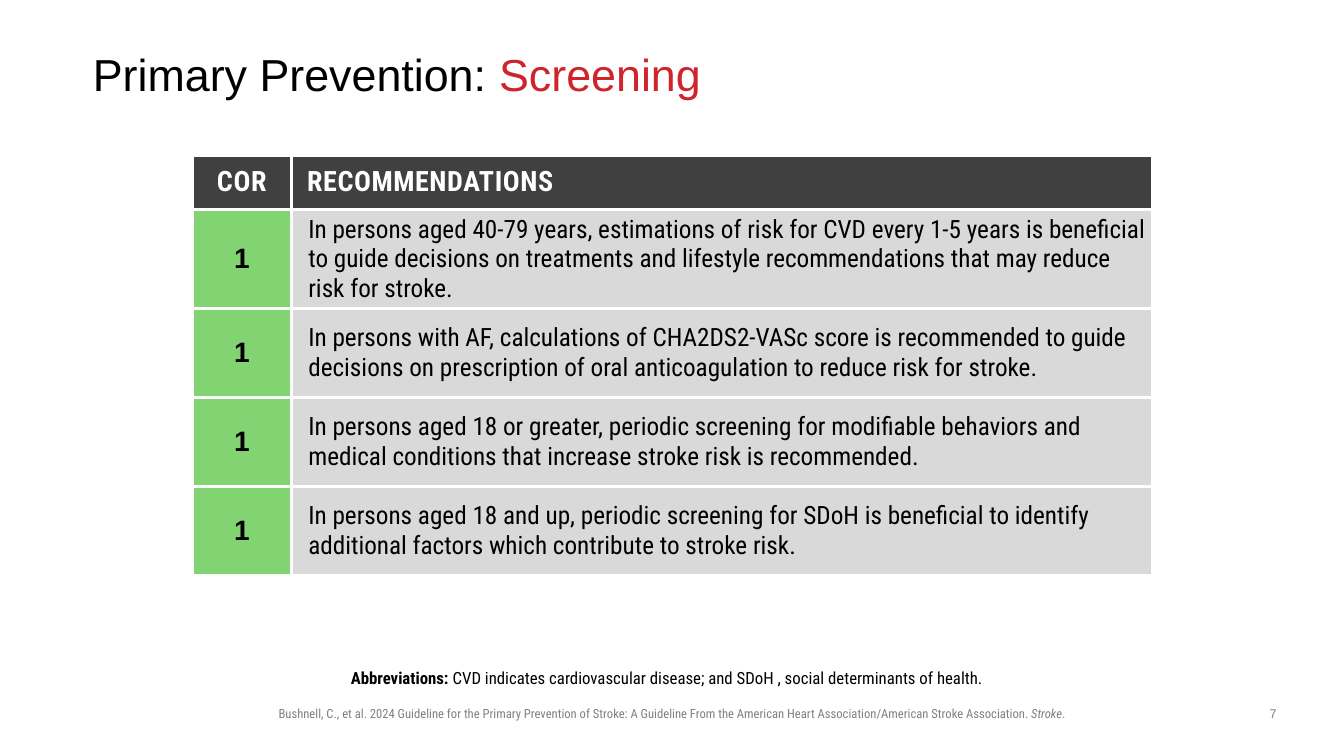
from lxml.etree import SubElement
from pptx import Presentation
from pptx.dml.color import RGBColor
from pptx.enum.text import MSO_ANCHOR, MSO_AUTO_SIZE, PP_ALIGN
from pptx.oxml.ns import qn
from pptx.util import Cm, Pt

COLORS = {"black": "000000", "red": "CF2429", "gray": "808080", "white": "FFFFFF",
          "head": "404040", "green": "82D472", "pale": "D9D9D9"}
SANS, ROBOTO = "Arial", "Roboto Condensed"

TITLE = [("Primary Prevention: ", {}), ("Screening", {"color": "red"})]
HEADS = ["COR", "RECOMMENDATIONS"]
ADVICE = [
    ("1", "In persons aged 40-79 years, estimations of risk for CVD every 1-5 years is "
          "beneficial to guide decisions on treatments and lifestyle recommendations that "
          "may reduce risk for stroke."),
    ("1", "In persons with AF, calculations of CHA2DS2-VASc score is recommended to guide "
          "decisions on prescription of oral anticoagulation to reduce risk for stroke."),
    ("1", "In persons aged 18 or greater, periodic screening for modifiable behaviors and "
          "medical conditions that increase stroke risk is recommended."),
    ("1", "In persons aged 18 and up, periodic screening for SDoH is beneficial to identify "
          "additional factors which contribute to stroke risk."),
]
ABBREV = [("Abbreviations: ", {"bold": True}),
          ("CVD indicates cardiovascular disease; and SDoH , social determinants of health.", {})]
SOURCE = [("Bushnell, C., et al. 2024 Guideline for the Primary Prevention of Stroke: A Guideline "
           "From the American Heart Association/American Stroke Association. ", {}),
          ("Stroke", {"italic": True}), (".", {})]
NUMBER = [("7", {})]

HEAD = {"size": Pt(20), "name": ROBOTO, "color": "white", "bold": True}
GRADE = {"size": Pt(20), "name": SANS, "color": "black", "bold": True}
BODY = {"size": Pt(18), "name": ROBOTO, "color": "black", "bold": False}
SMALL = {"size": Pt(9), "color": "gray"}
SIDES = ("left", "top", "right", "bottom")
INSET = (0.25, 0.13, 0.25, 0.13)
TIGHT = (0.13, 0.13, 0.13, 0.13)
COLS = (2.49, 21.69)
HEAD_ROW, BODY_ROW = 1.37, 2.24


def rgb(name):
    return RGBColor.from_string(COLORS[name])


def write(frame, parts, style, align):
    para = frame.paragraphs[0]
    para.alignment = align
    for text, extra in parts:
        run = para.add_run()
        run.text = text
        for key, value in {**style, **extra}.items():
            if key == "color":
                run.font.color.rgb = rgb(value)
            else:
                setattr(run.font, key, value)
    return para


def pad(item, sizes):
    for side, size in zip(SIDES, sizes):
        setattr(item, f"margin_{side}", Cm(size))


def label(slide, place, parts, style, anchor=MSO_ANCHOR.TOP, inset=INSET):
    frame = slide.shapes.add_textbox(*map(Cm, place)).text_frame
    frame.word_wrap = True
    frame.vertical_anchor = anchor
    pad(frame, inset)
    return write(frame, parts, style, PP_ALIGN.CENTER)


def border(cell):
    props = cell._tc.get_or_add_tcPr()
    for spot, tag in enumerate(("a:lnL", "a:lnR", "a:lnT", "a:lnB")):
        line = SubElement(props, qn(tag), w=str(Pt(2.25)))
        fill = SubElement(line, qn("a:solidFill"))
        SubElement(fill, qn("a:srgbClr"), val=COLORS["white"])
        props.insert(spot, line)


def add_title(slide):
    title = slide.shapes.title
    title.left, title.top, title.width, title.height = map(Cm, (2.34, 1.02, 29.21, 1.83))
    frame = title.text_frame
    frame.auto_size = MSO_AUTO_SIZE.NONE
    frame.vertical_anchor = MSO_ANCHOR.MIDDLE
    pad(frame, (0, 0, 0, 0))
    style = {"size": Pt(32), "name": SANS, "color": "black"}
    write(frame, TITLE, style, PP_ALIGN.LEFT).line_spacing = 0.9


def add_grid(slide):
    rows = [HEADS, *ADVICE]
    tall = HEAD_ROW + BODY_ROW * len(ADVICE)
    place = map(Cm, (4.85, 3.91, sum(COLS), tall))
    table = slide.shapes.add_table(len(rows), len(COLS), *place).table
    for col, width in zip(table.columns, COLS):
        col.width = Cm(width)
    for r, texts in enumerate(rows):
        table.rows[r].height = Cm(BODY_ROW if r else HEAD_ROW)
        for c, text in enumerate(texts):
            cell = table.cell(r, c)
            cell.vertical_anchor = MSO_ANCHOR.MIDDLE
            pad(cell, TIGHT if r else INSET)
            cell.fill.solid()
            cell.fill.fore_color.rgb = rgb(("green", "pale")[c] if r else "head")
            border(cell)
            style = (GRADE, BODY)[c] if r else HEAD
            align = PP_ALIGN.LEFT if c else PP_ALIGN.CENTER
            para = write(cell.text_frame, [(text, {})], style, align)
            if c:
                para._p.get_or_add_pPr().set("marL", str(Cm(0.3 if r else 0.15)))
            if not r:
                para.runs[0]._r.get_or_add_rPr().set("spc", "40" if c else "50")


def main():
    deck = Presentation()
    deck.slide_width, deck.slide_height = Cm(33.87), Cm(19.05)
    slide = deck.slides.add_slide(deck.slide_layouts[5])
    add_title(slide)
    add_grid(slide)
    note = label(slide, (4.78, 16.31, 24.31, 1.17), ABBREV,
                 {"size": Pt(12), "name": ROBOTO, "color": "black"},
                 MSO_ANCHOR.BOTTOM, (0, 0.13, 0.25, 0.13))
    note.line_spacing = 0.9
    label(slide, (5.99, 17.65, 21.89, 0.64), SOURCE, {**SMALL, "name": ROBOTO})
    label(slide, (31.55, 17.65, 1.07, 0.66), NUMBER, {**SMALL, "name": SANS})
    deck.save("out.pptx")


if __name__ == "__main__":
    main()
